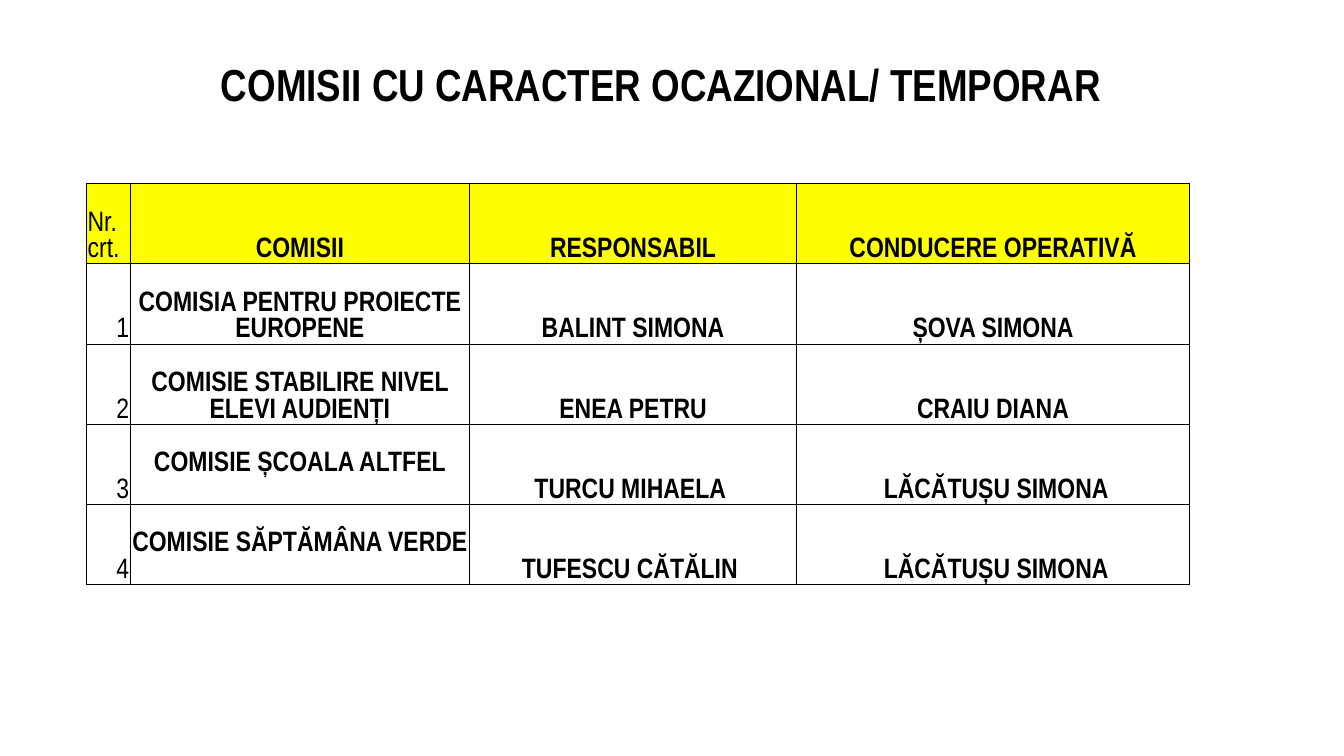
from dataclasses import dataclass

from lxml import etree
from pptx import Presentation
from pptx import util as u
from pptx.dml import color
from pptx.enum import text

FONT = "Arial Narrow"
BLACK, YELLOW = "000000", "FFFF00"
LEFT, CENTER, RIGHT = text.PP_ALIGN.LEFT, text.PP_ALIGN.CENTER, text.PP_ALIGN.RIGHT
A_NS = "http://schemas.openxmlformats.org/drawingml/2006/main"
WIDTHS = [0.43, 3.37, 3.24, 3.9]
HEIGHT = 3.98
LIFT = 0.27  # one text line


@dataclass
class Entry:
    body: str
    lead: str
    chief: str
    base: float = 0.0  # space under the commission's name


HEADS = ["Nr.\vcrt.", "COMISII", "RESPONSABIL", "CONDUCERE OPERATIVĂ"]
ENTRIES = [
    Entry("COMISIA PENTRU PROIECTE EUROPENE", "BALINT SIMONA", "ȘOVA SIMONA"),
    Entry("COMISIE STABILIRE NIVEL ELEVI AUDIENȚI", "ENEA PETRU", "CRAIU DIANA"),
    Entry("COMISIE ȘCOALA ALTFEL", "TURCU MIHAELA ", " LĂCĂTUȘU SIMONA", LIFT),
    Entry("COMISIE SĂPTĂMÂNA VERDE", "TUFESCU CĂTĂLIN ", " LĂCĂTUȘU SIMONA", LIFT),
]


def rgb(code: str) -> color.RGBColor:
    return color.RGBColor.from_string(code)


def apply(item, values: dict) -> None:
    for name, value in values.items():
        setattr(item, name, value)


def write(frame, words: str, size: int, bold: bool, align) -> None:
    para = frame.paragraphs[0]
    para.text = words
    para.alignment = align
    for run in para.runs:
        apply(run.font, {"name": FONT, "size": u.Pt(size), "bold": bold})
        run.font.color.rgb = rgb(BLACK)


def border(cell) -> None:
    props = cell._tc.get_or_add_tcPr()
    for spot, side in enumerate(("lnL", "lnR", "lnT", "lnB")):
        line = etree.Element(f"{{{A_NS}}}{side}", w=str(u.Pt(0.5)))
        fill = etree.SubElement(line, f"{{{A_NS}}}solidFill")
        etree.SubElement(fill, f"{{{A_NS}}}srgbClr", val=BLACK)
        props.insert(spot, line)


def style(cell, words: str, bold: bool, align, base: float, fill: str | None) -> None:
    edge = u.Inches(0.01)
    apply(cell, {
        "margin_left": edge, "margin_right": edge, "margin_top": edge,
        "margin_bottom": u.Inches(base),
        "vertical_anchor": text.MSO_ANCHOR.BOTTOM,
    })
    write(cell.text_frame, words, 20, bold, align)
    if fill:
        cell.fill.solid()
        cell.fill.fore_color.rgb = rgb(fill)
    else:
        cell.fill.background()
    border(cell)


def add_title(slide) -> None:
    box = slide.shapes.add_textbox(
        u.Inches(1.23), u.Inches(0.99), u.Inches(10.66), u.Inches(0.16))
    apply(box.text_frame, {
        "word_wrap": True, "auto_size": text.MSO_AUTO_SIZE.NONE,
        "vertical_anchor": text.MSO_ANCHOR.BOTTOM,
    })
    write(box.text_frame, "COMISII CU CARACTER OCAZIONAL/ TEMPORAR", 32, True, CENTER)


def add_grid(slide) -> None:
    count = len(ENTRIES) + 1
    grid = slide.shapes.add_table(
        count, len(WIDTHS), u.Inches(0.86), u.Inches(1.82),
        u.Inches(sum(WIDTHS)), u.Inches(HEIGHT)).table
    apply(grid, {"first_row": False, "horz_banding": False})
    for col, width in zip(grid.columns, WIDTHS):
        col.width = u.Inches(width)
    for row in grid.rows:
        row.height = u.Inches(HEIGHT / count)

    # Header row
    for col, head in enumerate(HEADS):
        style(grid.cell(0, col), head, col > 0, CENTER if col else LEFT, 0, YELLOW)

    # Numbered commissions
    for row, entry in enumerate(ENTRIES, 1):
        for col, words in enumerate([str(row), entry.body, entry.lead, entry.chief]):
            style(grid.cell(row, col), words, col > 0, CENTER if col else RIGHT,
                  entry.base if col == 1 else 0, None)


def main() -> None:
    deck = Presentation()
    apply(deck, {"slide_width": u.Inches(13.33), "slide_height": u.Inches(7.5)})
    slide = deck.slides.add_slide(deck.slide_layouts[6])
    add_title(slide)
    add_grid(slide)
    deck.save("out.pptx")


if __name__ == "__main__":
    main()
